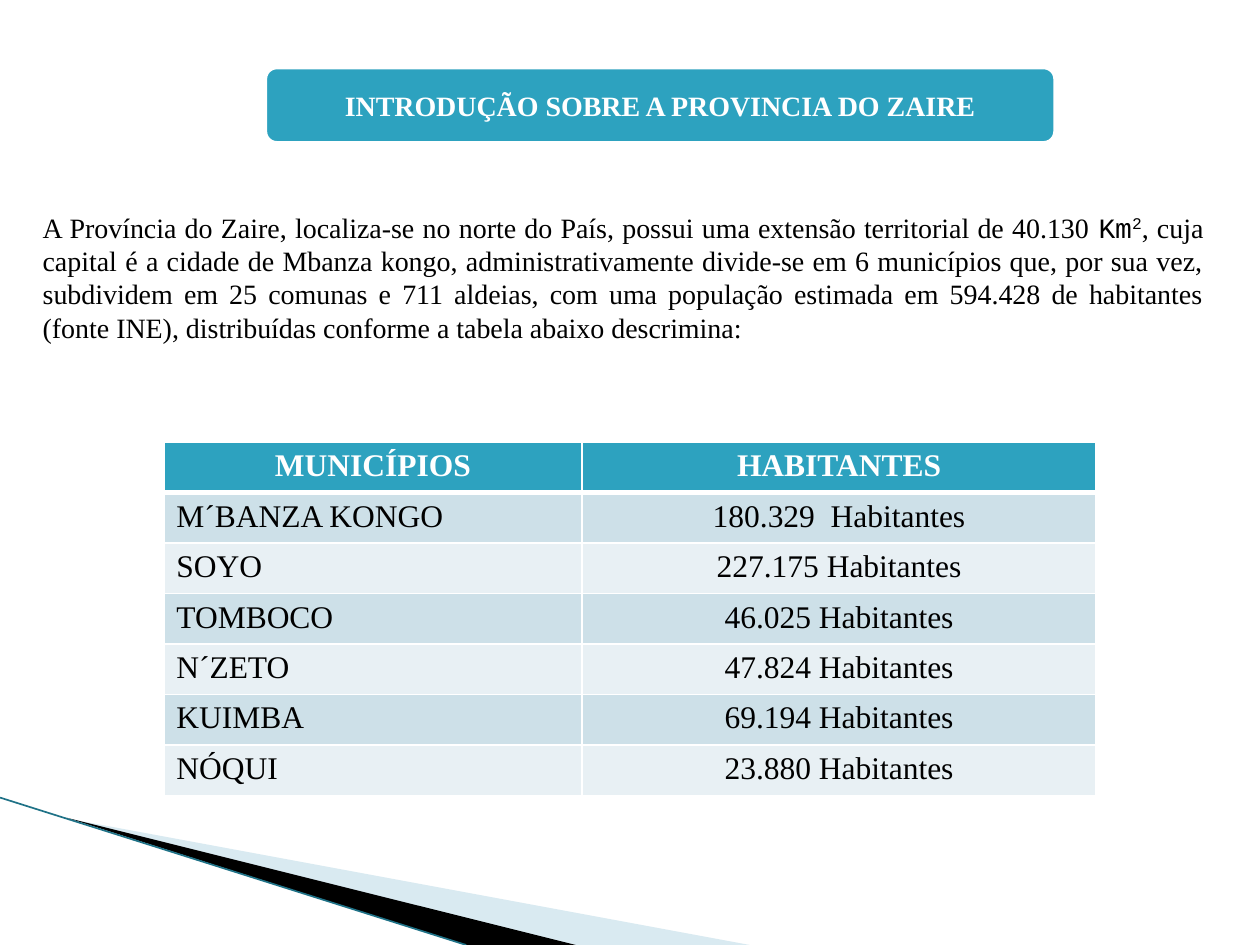
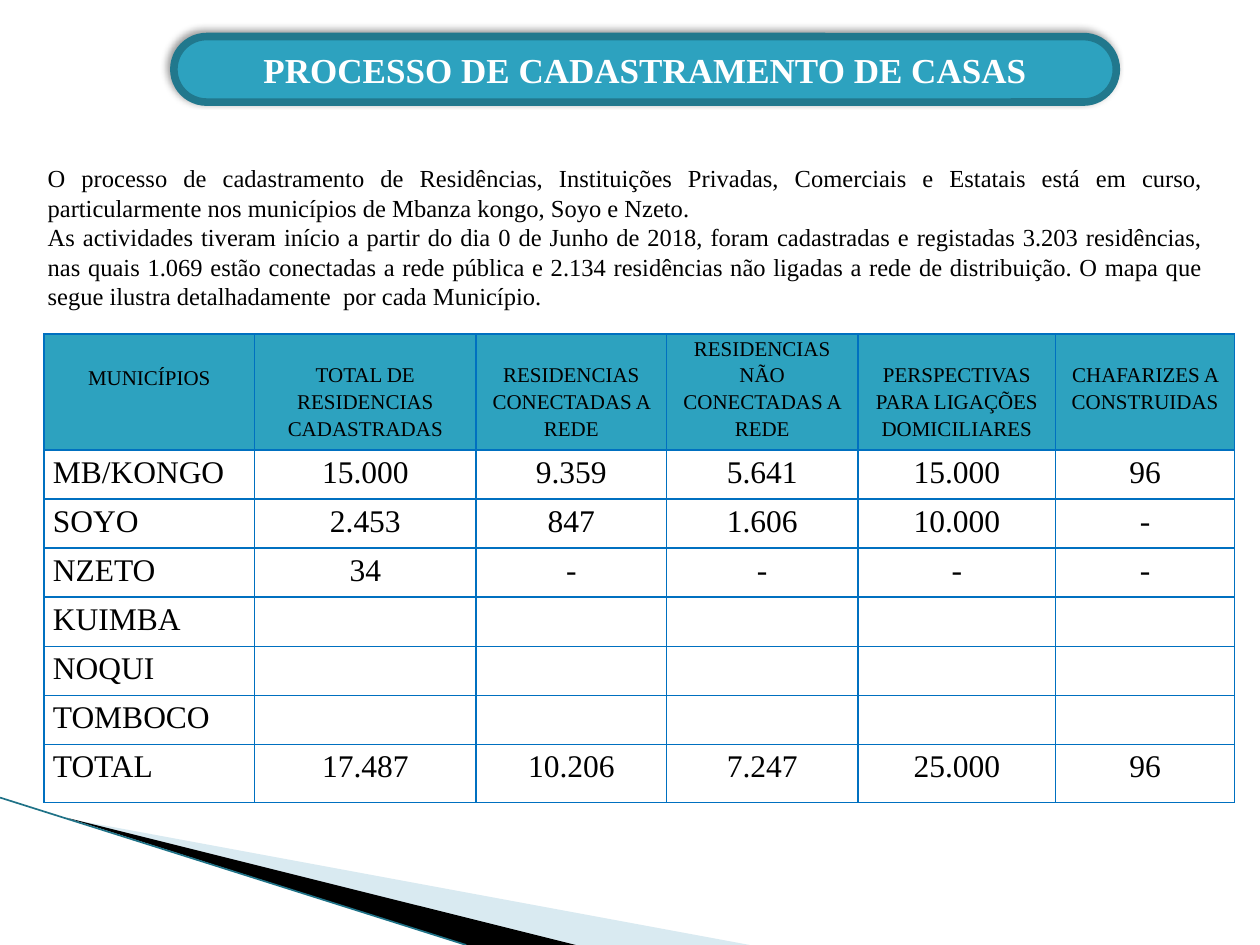
from dataclasses import dataclass

from lxml.etree import SubElement
from pptx import Presentation
from pptx.dml.color import RGBColor
from pptx.enum.shapes import MSO_CONNECTOR, MSO_SHAPE
from pptx.enum.text import MSO_ANCHOR, MSO_AUTO_SIZE, PP_ALIGN
from pptx.oxml.ns import qn
from pptx.util import Inches, Pt


@dataclass(frozen=True)
class Theme:
    font: str = "Times New Roman"
    mono: str = "Courier New"
    black: str = "000000"
    white: str = "FFFFFF"
    teal: str = "2DA2BF"
    dark_teal: str = "21788D"
    swoosh: str = "A0CBDC"
    edge: str = "1F7287"
    grid: str = "0070C0"
    bands: tuple = ("CDE0E8", "E8F0F4")
    title_size: float = 20
    text_size: float = 16
    small_size: float = 14
    cell_size: float = 18
    head_size: float = 12


@dataclass
class CellStyle:
    size: float
    color: str
    align: PP_ALIGN
    fill: str = ""
    bold: bool = False
    spacing: float = 1.0
    margins: tuple = (0.1, 0.05)
    top: float = 0


def rgb(color):
    return RGBColor.from_string(color)


class Deck:
    def __init__(self, theme):
        self.theme = theme
        self.prs = Presentation()
        self.prs.slide_width, self.prs.slide_height = Inches(10), Inches(7.5)
        self.s = None

    def slide(self):
        self.s = self.prs.slides.add_slide(self.prs.slide_layouts[5])
        t = self.theme
        self.wedge([(0.55, 6.5), (5.95, 7.5), (4.56, 7.5)], t.swoosh, 40)
        self.wedge([(0.53, 6.49), (4.57, 7.5), (3.7, 7.5)], t.black)
        self.line((0, 6.33), (3.7, 7.5), t.edge, 0.95)

    def wedge(self, points, color, opacity=100):
        (x, y), *rest = [(Inches(a), Inches(b)) for a, b in points]
        builder = self.s.shapes.build_freeform(x, y)
        builder.add_line_segments(rest, close=True)
        sp = builder.convert_to_shape()
        sp.shadow.inherit = False
        sp.fill.solid()
        sp.fill.fore_color.rgb = rgb(color)
        sp.line.fill.background()
        if opacity < 100:
            clr = sp.element.spPr.find(".//" + qn("a:srgbClr"))
            SubElement(clr, qn("a:alpha"), val=str(opacity * 1000))

    def line(self, start, end, color, width):
        points = [Inches(v) for v in (*start, *end)]
        cxn = self.s.shapes.add_connector(MSO_CONNECTOR.STRAIGHT, *points)
        cxn.line.color.rgb = rgb(color)
        cxn.line.width = Pt(width)
        SubElement(cxn.element.spPr, qn("a:effectLst"))

    def run(self, p, text, size, color, bold=False, font=None, raised=False):
        r = p.add_run()
        r.text = text
        r.font.name = font or self.theme.font
        r.font.size = Pt(size)
        r.font.bold = bold
        r.font.color.rgb = rgb(color)
        if raised:
            r._r.get_or_add_rPr().set("baseline", "30000")

    def title(self, text, box, size, border, radius, shadow=False):
        t = self.theme
        box = [Inches(v) for v in box]
        band = self.s.shapes.add_shape(MSO_SHAPE.ROUNDED_RECTANGLE, *box)
        band.adjustments[0] = radius
        band.fill.solid()
        band.fill.fore_color.rgb = rgb(t.teal)
        band.line.color.rgb = rgb(border)
        band.line.width = Pt(4.33)
        band.shadow.inherit = False
        if shadow:
            effects = band.element.spPr.find(qn("a:effectLst"))
            outer = SubElement(effects, qn("a:outerShdw"), blurRad=str(Pt(4)),
                               dist=str(Pt(3)), dir=str(225 * 60000),
                               algn="br", rotWithShape="0")
            clr = SubElement(outer, qn("a:srgbClr"), val=t.black)
            SubElement(clr, qn("a:alpha"), val="40000")
        title = self.s.shapes.title
        title.left, title.top, title.width, title.height = box
        band.element.getparent().append(title.element)
        tf = title.text_frame
        tf.auto_size = MSO_AUTO_SIZE.NONE
        tf.vertical_anchor = MSO_ANCHOR.MIDDLE
        p = tf.paragraphs[0]
        p.alignment = PP_ALIGN.CENTER
        self.run(p, text, size, t.white, bold=True)

    def text(self, box, paragraphs, size, leading):
        sp = self.s.shapes.add_textbox(*[Inches(v) for v in box])
        tf = sp.text_frame
        tf.word_wrap = True
        tf.vertical_anchor = MSO_ANCHOR.MIDDLE
        for i, runs in enumerate(paragraphs):
            p = tf.add_paragraph() if i else tf.paragraphs[0]
            p.alignment = PP_ALIGN.JUSTIFY
            p.line_spacing = Pt(leading)
            for text, options in runs:
                self.run(p, text, size, self.theme.black, **options)

    def borders(self, cell, color, widths):
        tc_pr = cell._tc.get_or_add_tcPr()
        for i, (side, width) in enumerate(zip("LRTB", widths)):
            ln = SubElement(tc_pr, qn(f"a:ln{side}"), w=str(Pt(width)))
            fill = SubElement(ln, qn("a:solidFill"))
            SubElement(fill, qn("a:srgbClr"), val=color)
            tc_pr.insert(i, ln)

    def cell(self, cell, text, style):
        x, y = style.margins
        cell.margin_left = cell.margin_right = Inches(x)
        cell.margin_top, cell.margin_bottom = Inches(y + style.top), Inches(y)
        if style.fill:
            cell.fill.solid()
            cell.fill.fore_color.rgb = rgb(style.fill)
        else:
            cell.fill.background()
        p = cell.text_frame.paragraphs[0]
        p.alignment = style.align
        p.line_spacing = style.spacing
        p.font.size = Pt(style.size)
        if text:
            self.run(p, text, style.size, style.color, style.bold)

    def table(self, at, cols, heights, rows, style_for, border, head_rule=1):
        x, y = at
        frame = self.s.shapes.add_table(
            len(rows), len(cols), Inches(x), Inches(y),
            Inches(sum(cols)), Inches(sum(heights)))
        table = frame.table
        table.first_row = table.horz_banding = False
        for column, width in zip(table.columns, cols):
            column.width = Inches(width)
        for row, height in zip(table.rows, heights):
            row.height = Inches(height)
        for i, values in enumerate(rows):
            above = head_rule if i == 1 else 1
            below = head_rule if i == 0 else 1
            for j, value in enumerate(values):
                cell = table.cell(i, j)
                self.cell(cell, value, style_for(i, j))
                self.borders(cell, border, (1, 1, above, below))


def body_align(j):
    return PP_ALIGN.CENTER if j else PP_ALIGN.LEFT


def introduction(deck):
    t = deck.theme
    deck.slide()
    deck.text((0.24, 1.62, 9.41, 1.16), [[
        ("A Província do Zaire, localiza-se no norte do País, possui uma "
         "extensão territorial de 40.130 ", {}),
        ("Km", {"font": t.mono}),
        ("2", {"font": t.mono, "raised": True}),
        (", cuja capital é a cidade de Mbanza kongo, administrativamente "
         "divide-se em 6 municípios que, por sua vez, subdividem em 25 "
         "comunas e 711 aldeias, com uma população estimada em 594.428 de "
         "habitantes (fonte INE), distribuídas conforme a tabela abaixo "
         "descrimina:", {}),
    ]], t.text_size, 19)

    def style_for(i, j):
        if i == 0:
            return CellStyle(t.cell_size, t.white, PP_ALIGN.CENTER, t.teal, True)
        return CellStyle(t.cell_size, t.black, body_align(j), t.bands[(i - 1) % 2])

    rows = [
        ("MUNICÍPIOS", "HABITANTES"),
        ("M´BANZA KONGO", "180.329  Habitantes"),
        ("SOYO", "227.175 Habitantes"),
        ("TOMBOCO", "46.025 Habitantes"),
        ("N´ZETO", "47.824 Habitantes"),
        ("KUIMBA", "69.194 Habitantes"),
        ("NÓQUI", "23.880 Habitantes"),
    ]
    deck.table((1.3, 3.51), (3.32, 4.08), [0.4] * len(rows), rows,
               style_for, t.white, head_rule=3)
    deck.title("INTRODUÇÃO SOBRE A PROVINCIA DO ZAIRE", (2.09, 0.52, 6.3, 0.63),
               t.text_size, t.white, 0.17)


def house_register(deck):
    t = deck.theme
    deck.slide()
    deck.text((0.28, 1.24, 9.37, 1.28), [
        [("O processo de cadastramento de Residências, Instituições Privadas, "
          "Comerciais e Estatais está em curso, particularmente nos municípios "
          "de Mbanza kongo, Soyo e Nzeto.", {})],
        [("As actividades tiveram início a partir do dia 0 de Junho de 2018, "
          "foram cadastradas e registadas 3.203 residências, nas quais 1.069 "
          "estão conectadas a rede pública e 2.134 residências não ligadas a "
          "rede de distribuição. O mapa que segue ilustra detalhadamente  por "
          "cada Município.", {})],
    ], t.small_size, 16.9)
    head_tops = (0.23, 0.21, 0.21, 0, 0.21, 0.21)

    def style_for(i, j):
        shared = {"spacing": 1.15, "margins": (0.07, 0)}
        if i == 0:
            return CellStyle(t.head_size, t.black, PP_ALIGN.CENTER, t.teal,
                             top=head_tops[j], **shared)
        return CellStyle(t.cell_size, t.black, body_align(j), **shared)

    blank = ("",) * 5
    rows = [
        ("MUNICÍPIOS", "TOTAL DE RESIDENCIAS CADASTRADAS",
         "RESIDENCIAS CONECTADAS A REDE", "RESIDENCIAS NÃO CONECTADAS A REDE",
         "PERSPECTIVAS PARA LIGAÇÕES DOMICILIARES", "CHAFARIZES A CONSTRUIDAS"),
        ("MB/KONGO", "15.000", "9.359", "5.641", "15.000", "96"),
        ("SOYO", "2.453", "847", "1.606", "10.000", "-"),
        ("NZETO", "34", "-", "-", "-", "-"),
        ("KUIMBA", *blank),
        ("NOQUI", *blank),
        ("TOMBOCO", *blank),
        ("TOTAL", "17.487", "10.206", "7.247", "25.000", "96"),
    ]
    deck.table((0.35, 2.65), (1.67, 1.76, 1.51, 1.52, 1.57, 1.42),
               [0.92] + [0.39] * 6 + [0.46], rows, style_for, t.grid)
    deck.title("PROCESSO DE CADASTRAMENTO DE CASAS", (1.38, 0.29, 7.48, 0.52),
               t.title_size, t.dark_teal, 0.5, shadow=True)


def main():
    deck = Deck(Theme())
    introduction(deck)
    house_register(deck)
    deck.prs.save("out.pptx")


if __name__ == "__main__":
    main()
